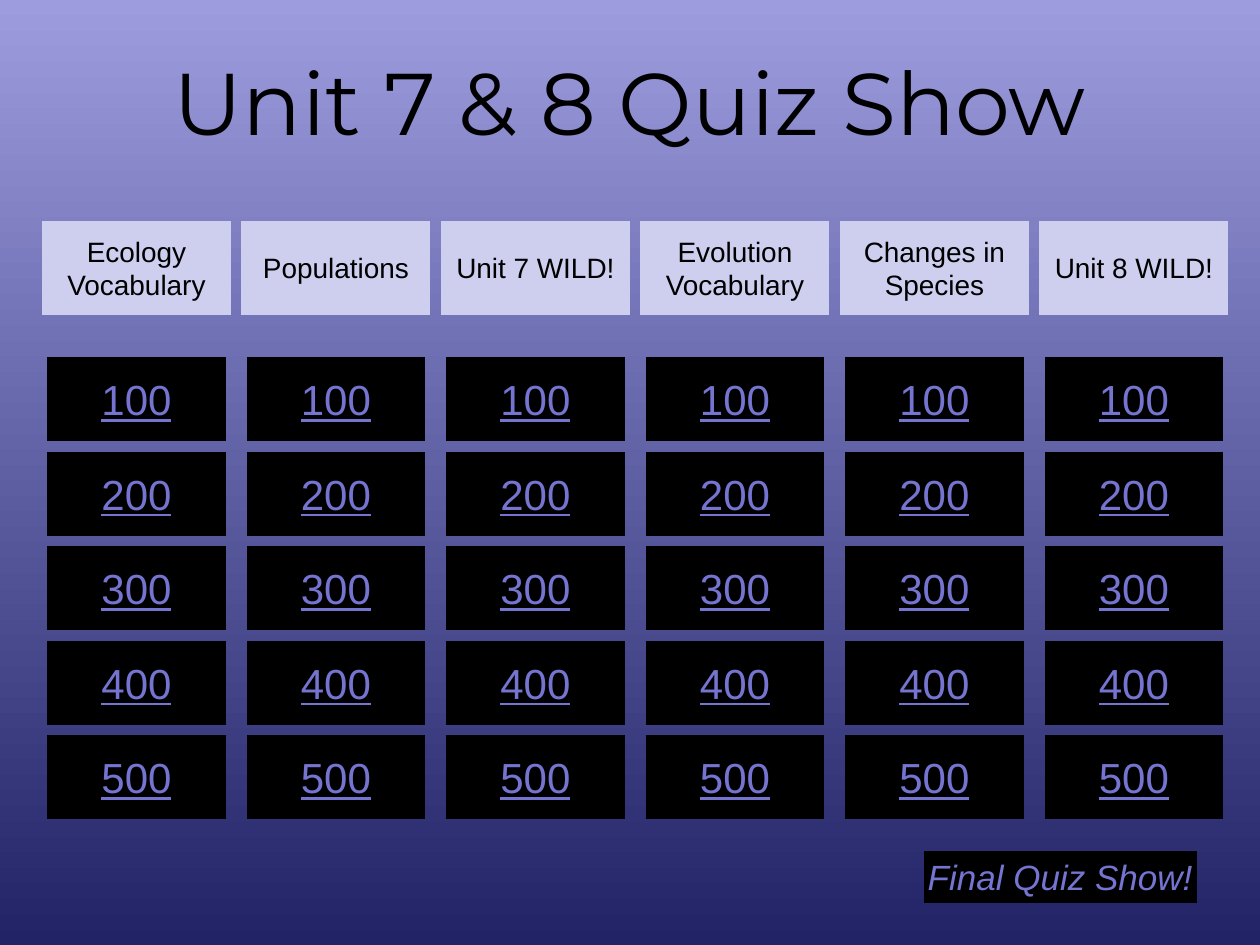
from dataclasses import dataclass

from pptx import Presentation
from pptx.dml.color import RGBColor
from pptx.enum.shapes import MSO_SHAPE
from pptx.enum.text import MSO_ANCHOR, PP_ALIGN
from pptx.util import Inches, Pt


@dataclass(frozen=True)
class Theme:
    background_top: str = "9C9CDF"
    background_bottom: str = "222267"
    header: str = "CECEEF"
    black: str = "000000"
    link: str = "7575D1"
    title_font: str = "Montserrat"
    body_font: str = "Arial"
    title_size: int = 50
    header_size: int = 16
    points_size: int = 24
    final_size: int = 20


class BoardSlide:
    def __init__(self, slide, theme):
        self.slide = slide
        self.theme = theme

    def background(self):
        fill = self.slide.background.fill
        fill.gradient()
        fill.gradient_angle = 270
        colors = (self.theme.background_top, self.theme.background_bottom)
        for stop, color in zip(fill.gradient_stops, colors):
            stop.color.rgb = RGBColor.from_string(color)

    def set_text(self, shape, text, font_name, size, color, underline=None, italic=None):
        text_frame = shape.text_frame
        text_frame.text = text
        text_frame.vertical_anchor = MSO_ANCHOR.MIDDLE
        for paragraph in text_frame.paragraphs:
            paragraph.alignment = PP_ALIGN.CENTER
            for run in paragraph.runs:
                font = run.font
                font.name = font_name
                font.size = Pt(size)
                font.color.rgb = RGBColor.from_string(color)
                font.underline = underline
                font.italic = italic

    def title(self, text, left, top, width, height):
        box = self.slide.shapes.add_textbox(
            Inches(left), Inches(top), Inches(width), Inches(height))
        self.set_text(box, text, self.theme.title_font, self.theme.title_size, self.theme.black)
        box.text_frame.word_wrap = True

    def button(self, text, left, top, width, height, fill, size, color, **emphasis):
        shape = self.slide.shapes.add_shape(
            MSO_SHAPE.ACTION_BUTTON_CUSTOM,
            Inches(left), Inches(top), Inches(width), Inches(height))
        shape.shadow.inherit = False
        shape.fill.solid()
        shape.fill.fore_color.rgb = RGBColor.from_string(fill)
        shape.line.fill.background()
        self.set_text(shape, text, self.theme.body_font, size, color, **emphasis)
        shape.text_frame.word_wrap = False


CATEGORIES = (
    "Ecology\nVocabulary",
    "Populations",
    "Unit 7 WILD!",
    "Evolution\nVocabulary",
    "Changes in\nSpecies",
    "Unit 8 WILD!",
)
POINTS = (100, 200, 300, 400, 500)

GAP = 1 / 12
BOARD_LEFT = 1 / 3
HEADER_TOP, HEADER_WIDTH, HEADER_HEIGHT = 1.75, 1.5, 0.75
TILE_TOP, TILE_WIDTH, TILE_HEIGHT = 17 / 6, HEADER_WIDTH - GAP, 2 / 3


def main():
    presentation = Presentation()
    presentation.slide_width = Inches(10)
    presentation.slide_height = Inches(7.5)
    theme = Theme()
    board = BoardSlide(presentation.slides.add_slide(presentation.slide_layouts[6]), theme)

    board.background()
    board.title("Unit 7 & 8 Quiz Show", BOARD_LEFT, 0.17, 10 - 2 * BOARD_LEFT, 1.25)

    for column, category in enumerate(CATEGORIES):
        left = BOARD_LEFT + column * (HEADER_WIDTH + GAP)
        board.button(category, left, HEADER_TOP, HEADER_WIDTH, HEADER_HEIGHT,
                     theme.header, theme.header_size, theme.black)
        for row, points in enumerate(POINTS):
            board.button(str(points), left + GAP / 2, TILE_TOP + row * (TILE_HEIGHT + GAP),
                         TILE_WIDTH, TILE_HEIGHT, theme.black, theme.points_size,
                         theme.link, underline=True)

    board.button("Final Quiz Show!", 7.33, 6.75, 2.17, 0.42,
                 theme.black, theme.final_size, theme.link, italic=True)
    presentation.save("out.pptx")


if __name__ == "__main__":
    main()
